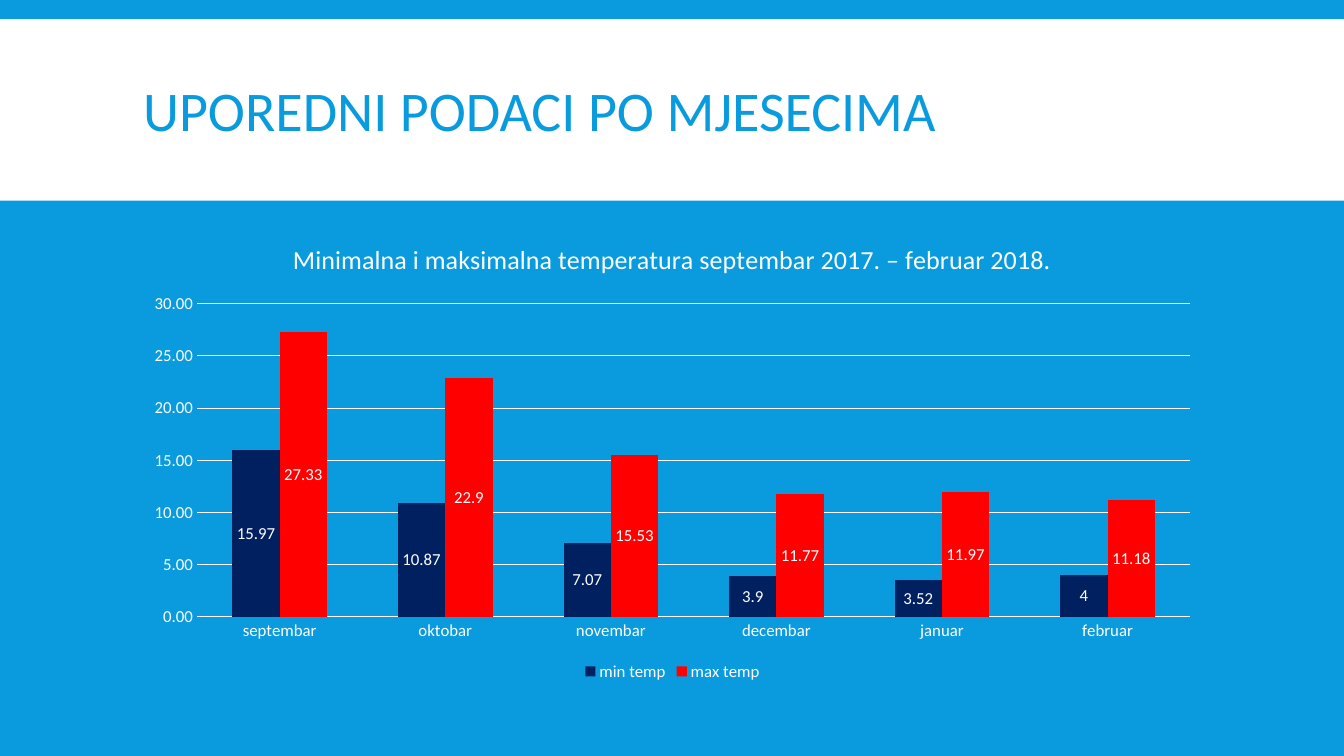
from pptx import Presentation
from pptx.chart.data import CategoryChartData
from pptx.dml.color import RGBColor
from pptx.enum.chart import (XL_CHART_TYPE as ChartType, XL_LABEL_POSITION as LabelPosition,
                             XL_LEGEND_POSITION as LegendPosition, XL_TICK_MARK as TickMark)
from pptx.enum.shapes import MSO_SHAPE as Preset
from pptx.enum.text import MSO_ANCHOR as Anchor, PP_ALIGN as Align
from pptx.util import Inches, Pt

FONT = "Calibri"
BLUE, WHITE, NAVY, RED = "099BDD", "FFFFFF", "002060", "FF0000"
MONTHS = ["septembar", "oktobar", "novembar", "decembar", "januar", "februar"]
TEMPERATURES = [
    ("min temp", NAVY, [15.97, 10.87, 7.07, 3.9, 3.52, 4]),
    ("max temp", RED, [27.33, 22.9, 15.53, 11.77, 11.97, 11.18]),
]


def paint(fill, color):
    fill.solid()
    fill.fore_color.rgb = RGBColor.from_string(color)


def style_font(font, size, color=WHITE):
    font.name = FONT
    font.size = Pt(size)
    font.bold = False
    font.color.rgb = RGBColor.from_string(color)


def add_band(page, left, top, width, height):
    band = page.shapes.add_shape(Preset.RECTANGLE, Inches(left), Inches(top),
                                 Inches(width), Inches(height))
    band.shadow.inherit = False
    paint(band.fill, WHITE)
    band.line.fill.background()


def set_title(page, text):
    title = page.shapes.title
    # Bring the title in front of the band
    page.shapes._spTree.append(title._element)
    title.left, title.top = Inches(1.32), Inches(0.31)
    title.width, title.height = Inches(10.7), Inches(1.65)
    frame = title.text_frame
    frame.text = text
    frame.word_wrap = True
    frame.vertical_anchor = Anchor.MIDDLE
    para = frame.paragraphs[0]
    para.alignment = Align.LEFT
    para.line_spacing = 0.85
    style_font(para.font, 40, BLUE)


def style_axis(axis):
    axis.major_tick_mark = axis.minor_tick_mark = TickMark.NONE
    axis.format.line.fill.background()
    style_font(axis.tick_labels.font, 12)


def style_series(series, color):
    paint(series.format.fill, color)
    series.invert_if_negative = False
    labels = series.data_labels
    labels.show_value = True
    labels.position = LabelPosition.CENTER
    style_font(labels.font, 12)


def add_temperature_chart(page, heading):
    data = CategoryChartData()
    data.categories = MONTHS
    for name, _, values in TEMPERATURES:
        data.add_series(name, values)
    chart = page.shapes.add_chart(ChartType.COLUMN_CLUSTERED, Inches(1.32), Inches(2.2),
                                  Inches(10.7), Inches(4.6), data).chart
    style_font(chart.font, 10)

    # Heading and legend
    chart.has_title = True
    chart.chart_title.include_in_layout = False
    chart.chart_title.text_frame.text = heading
    style_font(chart.chart_title.text_frame.paragraphs[0].font, 18.6)
    chart.has_legend = True
    chart.legend.position = LegendPosition.BOTTOM
    chart.legend.include_in_layout = False
    style_font(chart.legend.font, 12)

    # Axes and gridlines
    style_axis(chart.category_axis)
    value_axis = chart.value_axis
    style_axis(value_axis)
    value_axis.minimum_scale, value_axis.maximum_scale = 0, 30
    value_axis.major_unit = 5
    value_axis.tick_labels.number_format = "0.00"
    value_axis.tick_labels.number_format_is_linked = False
    value_axis.has_major_gridlines = True
    grid = value_axis.major_gridlines.format.line
    paint(grid.fill, WHITE)
    grid.width = Pt(0.75)

    # Columns
    plot = chart.plots[0]
    plot.vary_by_categories = False
    plot.gap_width = 150
    plot.overlap = 0
    for series, (_, color, _) in zip(plot.series, TEMPERATURES):
        style_series(series, color)


def main():
    deck = Presentation()
    deck.slide_width, deck.slide_height = Inches(13.33), Inches(7.5)
    page = deck.slides.add_slide(deck.slide_layouts[5])
    paint(page.background.fill, BLUE)
    add_band(page, 0, 0.19, 13.33, 1.8)
    set_title(page, "UPOREDNI PODACI PO MJESECIMA")
    add_temperature_chart(
        page, "Minimalna i maksimalna temperatura septembar 2017. – februar 2018.")
    deck.save("out.pptx")


if __name__ == "__main__":
    main()
